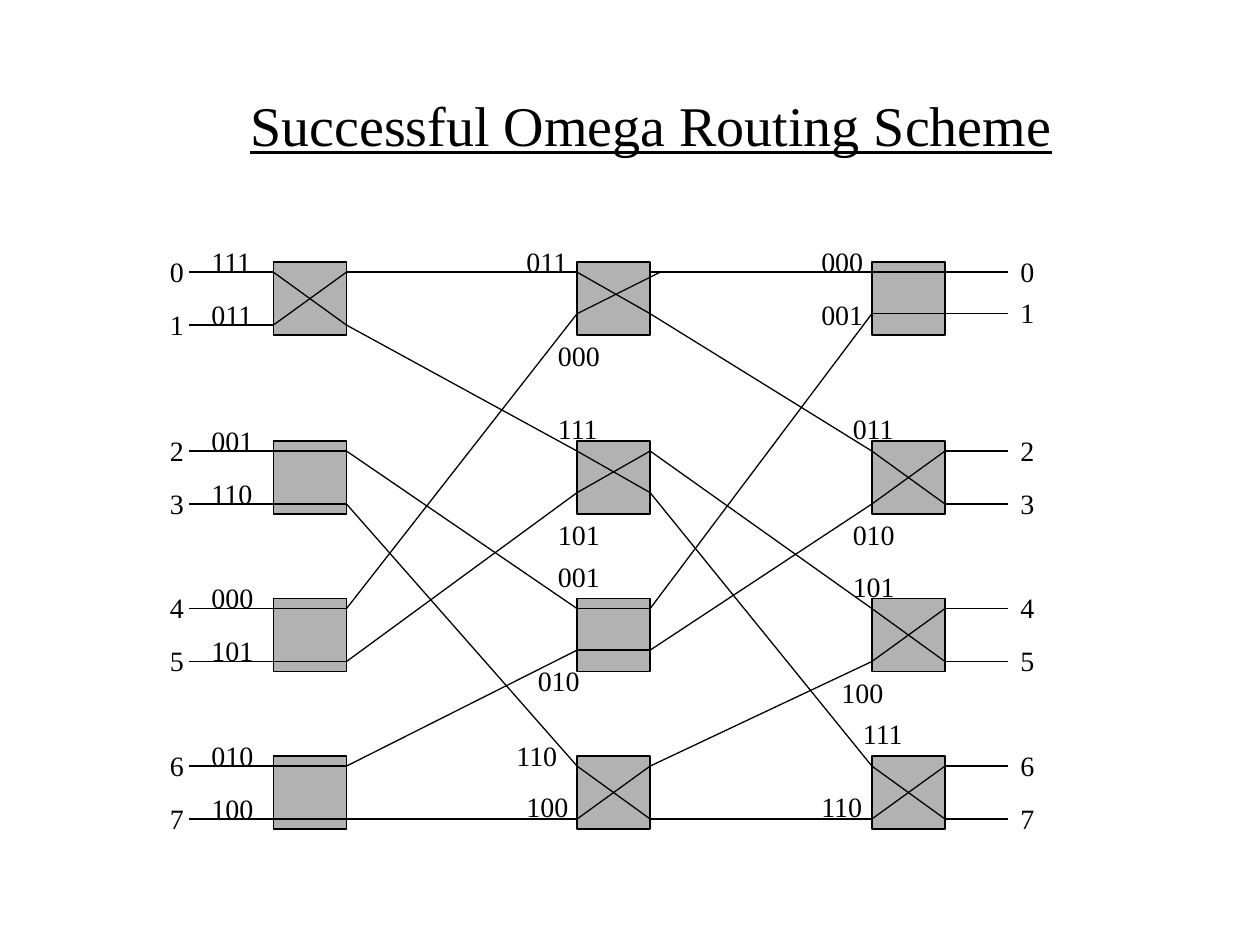
from collections import namedtuple
from dataclasses import dataclass

from lxml import etree
from pptx import Presentation
from pptx.dml.color import RGBColor
from pptx.enum import shapes, text
from pptx.oxml.ns import qn
from pptx.util import Inches, Pt

Box = namedtuple("Box", "left top width height")
Stage = namedtuple("Stage", "left gaps crossed labels")


@dataclass(frozen=True)
class Theme:
    font: str = "Times New Roman"
    ink: RGBColor = RGBColor(0, 0, 0)
    switch: RGBColor = RGBColor(0xB2, 0xB2, 0xB2)
    title_size: int = 32
    label_size: int = 16
    line_width: float = 0.75


THEME = Theme()
SIDE = 0.58            # side of a switch
PORT = 0.08            # upper port below the top of its switch
ROWS = (0, 1.42, 2.67, 3.92)
LEADS = (0.25, 6.75)   # outer ends of the input and output lines
DIGITS = Box(0, -0.19, 0.31, 0.37)
OVERSHOOT = 0.08       # one crossing wire runs past its switch

# Each label: bits, offset from the switch's left and from its top
STAGES = (
    Stage(0.92, (0.42, 0.42, 0.42, 0.42), (True, False, False, False),
          [(bits, -0.59, dy) for pair in ("111 011", "001 110", "000 101", "010 100")
           for bits, dy in zip(pair.split(), (-0.19, 0.23))]),
    Stage(3.33, (0.33, 0.33, 0.33, 0.42), (True, True, False, True),
          [("011", -0.5, -0.19), ("000", -0.25, 0.56),
           ("111", -0.25, -0.28), ("101", -0.25, 0.56),
           ("001", -0.25, -0.36), ("010", -0.41, 0.47),
           ("110", -0.58, -0.19), ("100", -0.5, 0.22)]),
    Stage(5.67, (0.33, 0.42, 0.42, 0.42), (False, True, True, True),
          [("000", -0.5, -0.19), ("001", -0.5, 0.23),
           ("011", -0.25, -0.28), ("010", -0.25, 0.56),
           ("101", -0.25, -0.28), ("100", -0.34, 0.56),
           ("111", -0.17, -0.36), ("110", -0.5, 0.22)]),
)


def add_text(s, box, words, size, wrap=False, **font):
    tb = s.shapes.add_textbox(*map(Inches, box))
    tf = tb.text_frame
    tf.word_wrap = wrap
    tf.auto_size = text.MSO_AUTO_SIZE.NONE if wrap else text.MSO_AUTO_SIZE.SHAPE_TO_FIT_TEXT
    r = tf.paragraphs[0].add_run()
    r.text = words
    for name, value in dict(name=THEME.font, size=Pt(size), **font).items():
        setattr(r.font, name, value)
    r.font.color.rgb = THEME.ink
    return tf


def add_wire(s, x1, y1, x2, y2):
    wire = s.shapes.add_connector(shapes.MSO_CONNECTOR.STRAIGHT,
                                  *map(Inches, (x1, y1, x2, y2)))
    wire.line.color.rgb = THEME.ink
    wire.line.width = Pt(THEME.line_width)
    etree.SubElement(wire._element.spPr, qn("a:effectLst"))


def add_switch(s, left, top):
    sp = s.shapes.add_shape(shapes.MSO_SHAPE.RECTANGLE,
                            *map(Inches, (left, top, SIDE, SIDE)))
    sp.shadow.inherit = False
    sp.fill.solid()
    sp.fill.fore_color.rgb = THEME.switch
    sp.line.color.rgb = THEME.ink
    sp.line.width = Pt(THEME.line_width)


def port_heights(stage, top):
    return [top + row + PORT + dy
            for row, gap in zip(ROWS, stage.gaps) for dy in (0, gap)]


def draw_title(s, box):
    tf = add_text(s, box, "Successful Omega Routing Scheme", THEME.title_size,
                  wrap=True, underline=True)
    tf.vertical_anchor = text.MSO_ANCHOR.MIDDLE
    tf.paragraphs[0].alignment = text.PP_ALIGN.CENTER


def draw_stage(s, box, stage):
    """Draw one column of switches with its inner wires and bit labels."""
    left = box.left + stage.left
    ports = port_heights(stage, box.top)
    for row in ROWS:
        add_switch(s, left, box.top + row)
    for i, y in enumerate(ports):
        crossed = stage.crossed[i // 2]
        extra = OVERSHOOT if stage is STAGES[1] and i == 1 else 0
        add_wire(s, left, y, left + SIDE + extra, ports[i ^ 1] if crossed else y)
    for i, (bits, dx, dy) in enumerate(stage.labels):
        add_text(s, (left + dx, box.top + ROWS[i // 2] + dy, 0.53, 0.37),
                 bits, THEME.label_size)


def draw_shuffle(s, box, start, end):
    """Join two stages by the perfect shuffle: rotate the port number left."""
    sources, targets = port_heights(start, box.top), port_heights(end, box.top)
    for i, y in enumerate(sources):
        target = 2 * i % 8 + i // 4
        add_wire(s, box.left + start.left + SIDE, y,
                 box.left + end.left, targets[target])


def draw_terminals(s, box, stage, switch_edge, lead, number_left):
    for i, y in enumerate(port_heights(stage, box.top)):
        add_wire(s, box.left + switch_edge, y, box.left + lead, y)
        add_text(s, (box.left + number_left, y + DIGITS.top,
                     DIGITS.width, DIGITS.height), str(i), THEME.label_size)


def draw_network(s, box):
    for stage in STAGES:
        draw_stage(s, box, stage)
    for start, end in zip(STAGES, STAGES[1:]):
        draw_shuffle(s, box, start, end)
    first, last = STAGES[0], STAGES[-1]
    draw_terminals(s, box, first, first.left, LEADS[0], 0)
    draw_terminals(s, box, last, last.left + SIDE, LEADS[1], LEADS[1])


def main():
    prs = Presentation()
    prs.slide_width, prs.slide_height = Inches(10), Inches(7.5)
    s = prs.slides.add_slide(prs.slide_layouts[6])
    draw_title(s, Box(0.92, 0.38, 8.5, 1.21))
    draw_network(s, Box(1.25, 2.08, 7.06, 4.5))
    prs.save("out.pptx")


if __name__ == "__main__":
    main()
